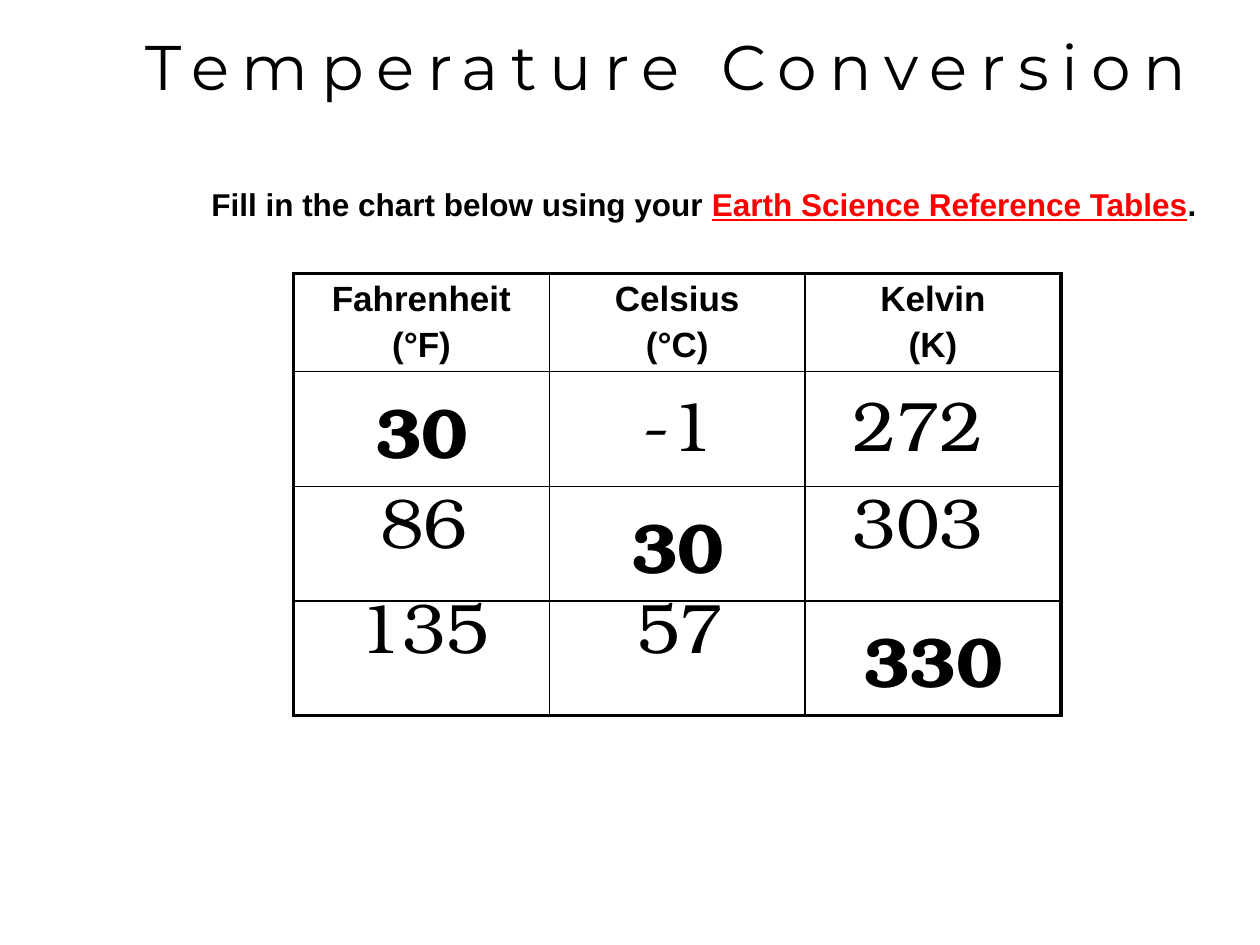
import pptx
import pptx.util
import pptx.dml.color
import pptx.enum.text
import pptx.oxml
import pptx.oxml.ns
from pptx.util import Inches

ALIGN = pptx.enum.text.PP_ALIGN
ANCHOR = pptx.enum.text.MSO_ANCHOR
FIT = pptx.enum.text.MSO_AUTO_SIZE
SERIF = "TeX Gyre Bonum"

HEADS = [("Fahrenheit", "(°F)"), ("Celsius", "(°C)"), ("Kelvin", "(K)")]
GIVEN = ["30", "30", "330"]
# Text, left and top within the table, width
ANSWERS = [
    ("-1", 2.67, 0.81, 0.83),
    ("272", 4.34, 0.81, 1.35),
    ("86", 0.59, 1.58, 0.97),
    ("303", 4.34, 1.58, 1.35),
    ("135", 0.42, 2.41, 1.35),
    ("57", 2.62, 2.41, 0.97),
]


def color(code):
    return pptx.dml.color.RGBColor.from_string(code)


def style(font, name, size, bold=False, code="000000"):
    font.name = name
    font.size = pptx.util.Pt(size)
    font.bold = bold
    font.color.rgb = color(code)


def add_title(slide, left, top, width, height):
    title = slide.shapes.title
    title.left, title.top = Inches(left), Inches(top)
    title.width, title.height = Inches(width), Inches(height)
    frame = title.text_frame
    frame.text = "Temperature Conversion"
    frame.word_wrap = False
    frame.auto_size = FIT.NONE
    frame.vertical_anchor = ANCHOR.TOP
    line = frame.paragraphs[0]
    line.alignment = ALIGN.CENTER
    run = line.runs[0]
    style(run.font, "Montserrat", 36)
    run.font._element.set("spc", "720")


def add_box(slide, left, top, width, height):
    box = slide.shapes.add_textbox(
        Inches(left), Inches(top), Inches(width), Inches(height))
    frame = box.text_frame
    frame.word_wrap = False
    frame.auto_size = FIT.SHAPE_TO_FIT_TEXT
    return frame


def add_task(slide, left, top, width, height):
    frame = add_box(slide, left, top, width, height)
    frame.vertical_anchor = ANCHOR.MIDDLE
    for text, code, under in [
        ("Fill in the chart below using your ", "000000", False),
        ("Earth Science Reference Tables", "FF0000", True),
        (".", "000000", False),
    ]:
        run = frame.paragraphs[0].add_run()
        run.text = text
        style(run.font, "Arial", 18, True, code)
        run.font.underline = under


def add_edges(cell, widths):
    """Draw the cell borders; widths maps L, R, T and B to points."""
    props = cell._tc.get_or_add_tcPr()
    space = pptx.oxml.ns.nsdecls("a")
    for spot, (side, width) in enumerate(widths.items()):
        props.insert(spot, pptx.oxml.parse_xml(
            f'<a:ln{side} {space} w="{int(pptx.util.Pt(width))}"><a:solidFill>'
            f'<a:srgbClr val="000000"/></a:solidFill></a:ln{side}>'))


def fill_cell(cell, lines, name, size):
    frame = cell.text_frame
    frame.text = "\n".join(lines)
    for spot, line in enumerate(frame.paragraphs):
        line.alignment = ALIGN.CENTER
        if spot:
            line.space_before = pptx.util.Pt(size * 0.2)
        style(line.runs[0].font, name, size, True)


def add_grid(slide, left, top, width, height):
    count, head = len(HEADS), 0.78
    step = (height - head) / count
    table = slide.shapes.add_table(
        count + 1, count, Inches(left), Inches(top),
        Inches(width), Inches(height)).table
    table.first_row = table.horz_banding = False
    for col in table.columns:
        col.width = Inches(width / count)
    for r, row in enumerate(table.rows):
        row.height = Inches(step if r else head)
        for c, cell in enumerate(row.cells):
            cell.fill.background()
            add_edges(cell, {
                "L": 2.25 if c == 0 else 1,
                "R": 2.25 if c == count - 1 else 1,
                "T": 2.25 if r == 0 else 1,
                "B": 2.25 if r == count else 1,
            })
            if r == 0:
                cell.margin_bottom = 0
                fill_cell(cell, HEADS[c], "Arial", 20)
            elif r == c + 1:
                cell.vertical_anchor = ANCHOR.MIDDLE
                fill_cell(cell, [GIVEN[c]], SERIF, 40)


def add_answers(slide, left, top):
    for text, x, y, width in ANSWERS:
        frame = add_box(slide, left + x, top + y, width, 0.77)
        frame.text = text
        style(frame.paragraphs[0].runs[0].font, SERIF, 40)


def main():
    deck = pptx.Presentation()
    deck.slide_width, deck.slide_height = Inches(10), Inches(7.5)
    slide = deck.slides.add_slide(deck.slide_layouts.get_by_name("Title Only"))
    left, top = 2.33, 2.17
    add_title(slide, 0.89, 0.17, 8.8, 0.83)
    add_task(slide, 1.58, 1.42, 8.03, 0.4)
    add_grid(slide, left, top, 6.09, 3.51)
    add_answers(slide, left, top)
    deck.save("out.pptx")


if __name__ == "__main__":
    main()
